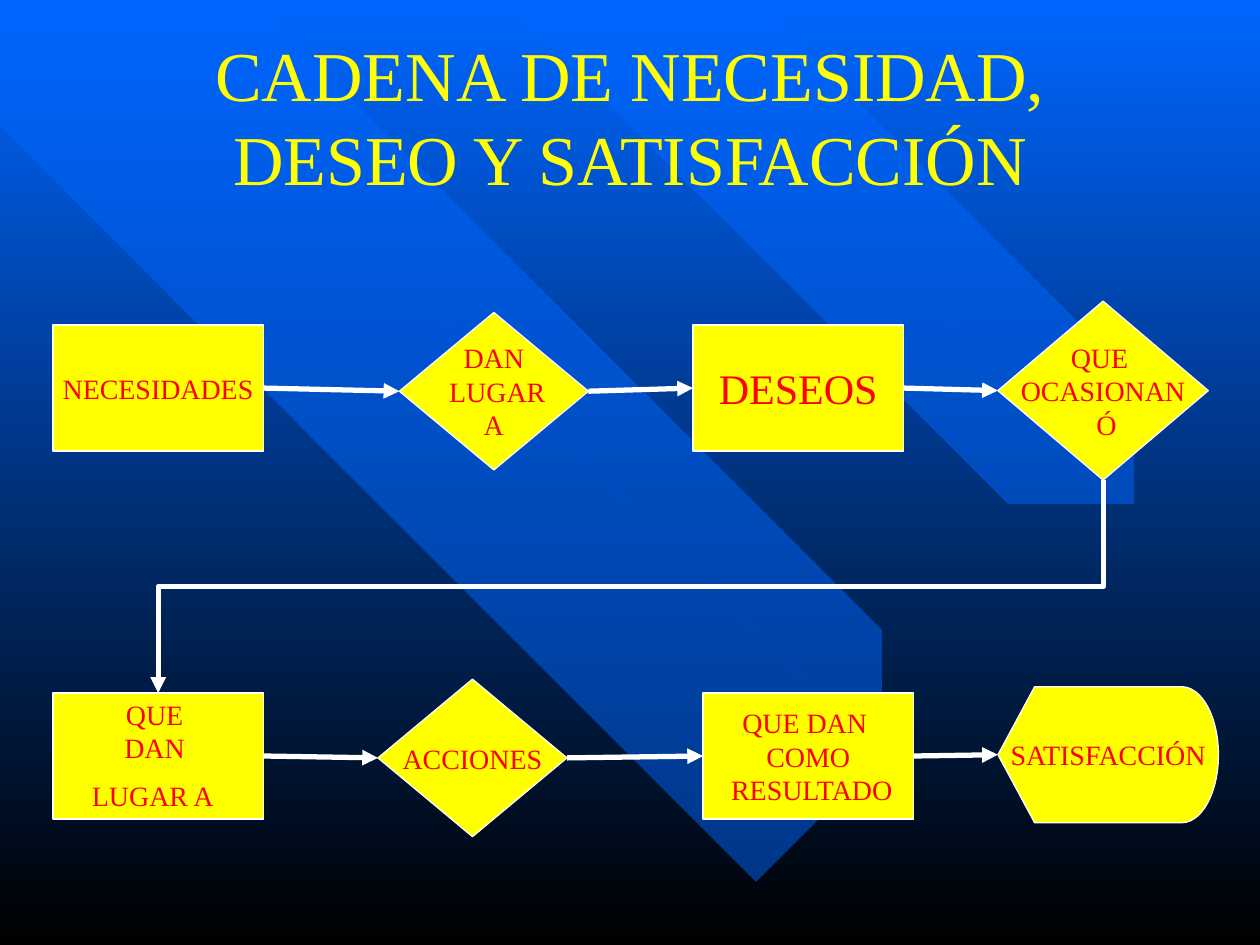
from lxml.etree import SubElement
from pptx import Presentation
from pptx.dml.color import RGBColor
from pptx.enum.shapes import MSO_CONNECTOR as LINK, MSO_SHAPE as SHAPE
from pptx.enum.text import MSO_ANCHOR as ANCHOR, PP_ALIGN as ALIGN
from pptx.oxml.ns import qn
from pptx.util import Inches, Pt

BLUE = RGBColor(0x00, 0x66, 0xFF)
BLACK = RGBColor(0x00, 0x00, 0x00)
YELLOW = RGBColor(0xFF, 0xFF, 0x00)
RED = RGBColor(0xFF, 0x00, 0x00)
WHITE = RGBColor(0xFF, 0xFF, 0xFF)

LEFT, RIGHT = 1, 3  # connection sites


class FlowSlide:
    font = "Times New Roman"

    def __init__(self, deck):
        self.page = deck.slides.add_slide(deck.slide_layouts[5])
        self.shapes = self.page.shapes

    def background(self, *colors):
        fill = self.page.background.fill
        fill.gradient()
        fill.gradient_angle = 270
        for stop, color in zip(fill.gradient_stops, colors):
            stop.color.rgb = color

    def stripe(self, points):
        builder = self.shapes.build_freeform(*points[0], scale=Inches(1))
        builder.add_line_segments(points[1:], close=True)
        band = builder.convert_to_shape()
        band.shadow.inherit = False
        band.fill.solid()
        band.fill.fore_color.rgb = BLUE
        band.line.fill.background()
        color = band._element.spPr.find(qn("a:solidFill"))[0]
        SubElement(color, qn("a:alpha"), val="50000")

    def add_span(self, para, text, size, color):
        span = para.add_run()
        span.text = text
        for name, value in {"name": self.font, "size": Pt(size)}.items():
            setattr(span.font, name, value)
        span.font.color.rgb = color

    def title(self, text, *place):
        box = self.shapes.title
        for name, value in zip(("left", "top", "width", "height"), place):
            setattr(box, name, Inches(value))
        box.text_frame.vertical_anchor = ANCHOR.MIDDLE
        para = box.text_frame.paragraphs[0]
        para.alignment = ALIGN.CENTER
        self.add_span(para, text, 40, YELLOW)
        self.shapes._spTree.append(box._element)  # in front of the stripes

    def step(self, kind, place, lines, size=16):
        box = self.shapes.add_shape(kind, *map(Inches, place))
        box.shadow.inherit = False
        box.fill.solid()
        box.fill.fore_color.rgb = YELLOW
        box.line.color.rgb = WHITE
        box.line.width = Pt(0.75)
        frame = box.text_frame
        frame.word_wrap = False
        frame.vertical_anchor = ANCHOR.MIDDLE
        for number, line in enumerate(lines):
            para = frame.add_paragraph() if number else frame.paragraphs[0]
            para.alignment = ALIGN.CENTER
            self.add_span(para, line, size, RED)
        return box

    def style_arrow(self, link):
        link.line.color.rgb = WHITE
        link.line.width = Pt(3)
        props = link._element.spPr
        SubElement(props.find(qn("a:ln")), qn("a:tailEnd"), type="triangle")
        SubElement(props, qn("a:effectLst"))

    def arrow(self, source, target):
        link = self.shapes.add_connector(LINK.STRAIGHT, 0, 0, 0, 0)
        link.begin_connect(source, RIGHT)
        link.end_connect(target, LEFT)
        self.style_arrow(link)

    def return_arrow(self, source, target):
        """Elbow from the bottom of source to the top of target, turned 90 degrees."""
        start_x = source.left + source.width // 2
        start_y = source.top + source.height
        end_x = target.left + target.width // 2
        across, down = start_x - end_x, target.top - start_y
        left = (start_x + end_x - down) // 2
        top = (start_y + target.top - across) // 2
        link = self.shapes.add_connector(LINK.ELBOW, left, top, left + down, top + across)
        link._element.spPr.find(qn("a:xfrm")).set("rot", "5400000")
        self.style_arrow(link)


STRIPES = [
    [(6.7, 5.93), (0.79, 0), (0, 0), (0, 0.84), (5.89, 6.75)],
    [(2.14, 0), (7.38, 5.27), (7.06, 5.59), (1.49, 0)],
    [(4.89, 0), (8.76, 3.89), (8.21, 4.44), (3.8, 0)],
    [(5.3, 0), (8.97, 3.68), (9.27, 3.38), (5.91, 0)],
]
PROCESS, DECISION = SHAPE.FLOWCHART_PROCESS, SHAPE.FLOWCHART_DECISION
UPPER_ROW = [
    (PROCESS, (0.42, 2.58, 1.67, 1), ["NECESIDADES"]),
    (DECISION, (3.17, 2.48, 1.5, 1.25), ["DAN", " LUGAR", " A "]),
    (PROCESS, (5.5, 2.58, 1.67, 1), ["DESEOS"], 24),
    (DECISION, (7.92, 2.39, 1.67, 1.42), ["QUE ", "OCASIONAN", " Ó"]),
]
LOWER_ROW = [
    (PROCESS, (0.42, 5.5, 1.67, 1), ["QUE ", "DAN ", "LUGAR A"]),
    (DECISION, (3, 5.39, 1.5, 1.25), ["ACCIONES"]),
    (PROCESS, (5.58, 5.5, 1.67, 1), ["QUE DAN ", "COMO", " RESULTADO"]),
    (SHAPE.FLOWCHART_DISPLAY, (7.92, 5.45, 1.75, 1.08), ["SATISFACCIÓN"]),
]


def main():
    deck = Presentation()
    deck.slide_width, deck.slide_height = Inches(10), Inches(7.5)
    slide = FlowSlide(deck)

    # Backdrop and title
    slide.background(BLUE, BLACK)
    for points in STRIPES:
        slide.stripe(points)
    slide.title("CADENA DE NECESIDAD, DESEO Y SATISFACCIÓN", 0.75, 0.25, 8.5, 1.33)

    # Steps of the chain
    upper, lower = [[slide.step(*item) for item in row] for row in (UPPER_ROW, LOWER_ROW)]
    # The last line of this step ends in a larger space, which makes it taller
    slide.add_span(lower[0].text_frame.paragraphs[-1], " ", 24, RED)

    # Arrows along each row, and from the upper row back to the lower one
    for row in (upper, lower):
        for source, target in zip(row, row[1:]):
            slide.arrow(source, target)
    slide.return_arrow(upper[-1], lower[0])

    deck.save("out.pptx")


if __name__ == "__main__":
    main()
